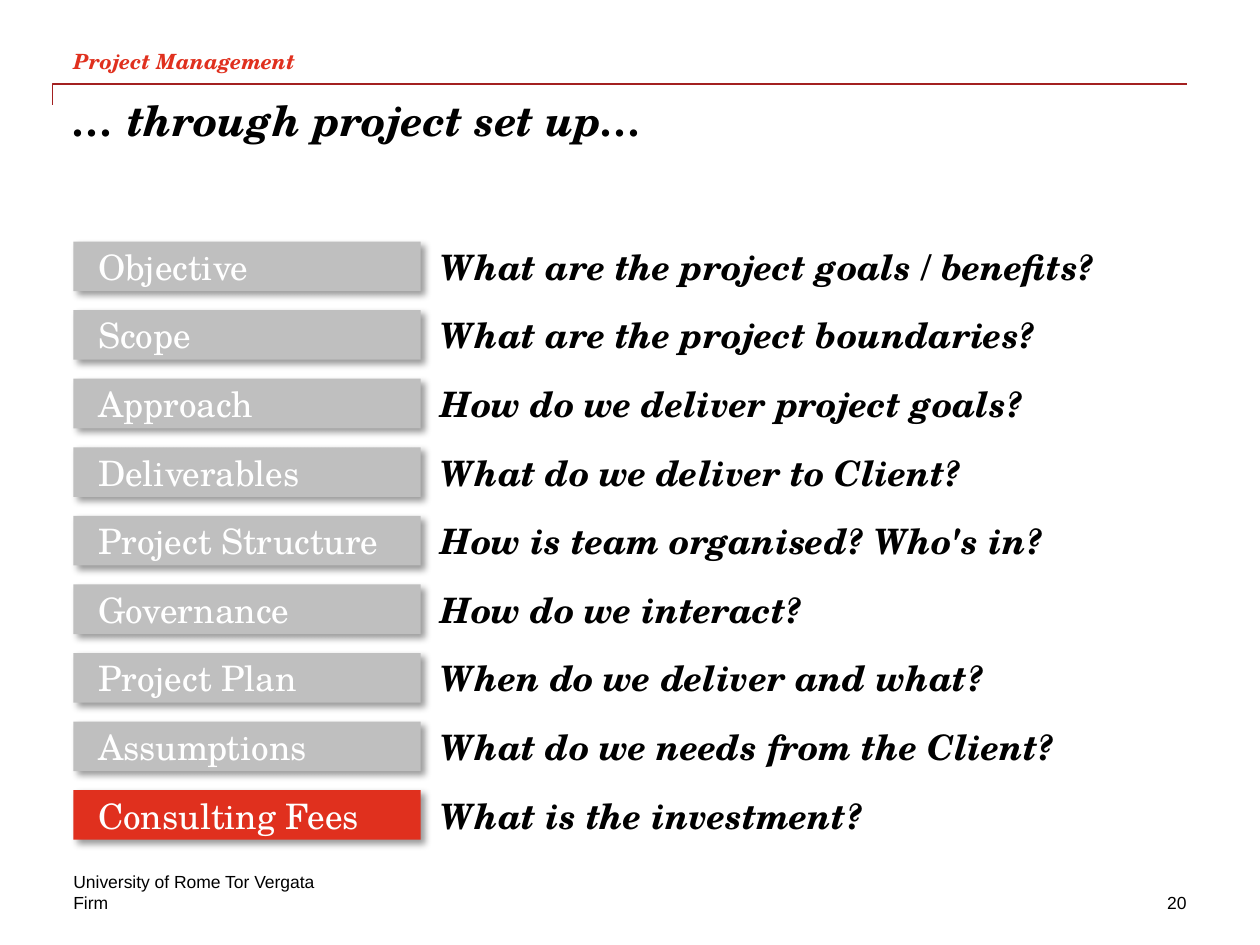
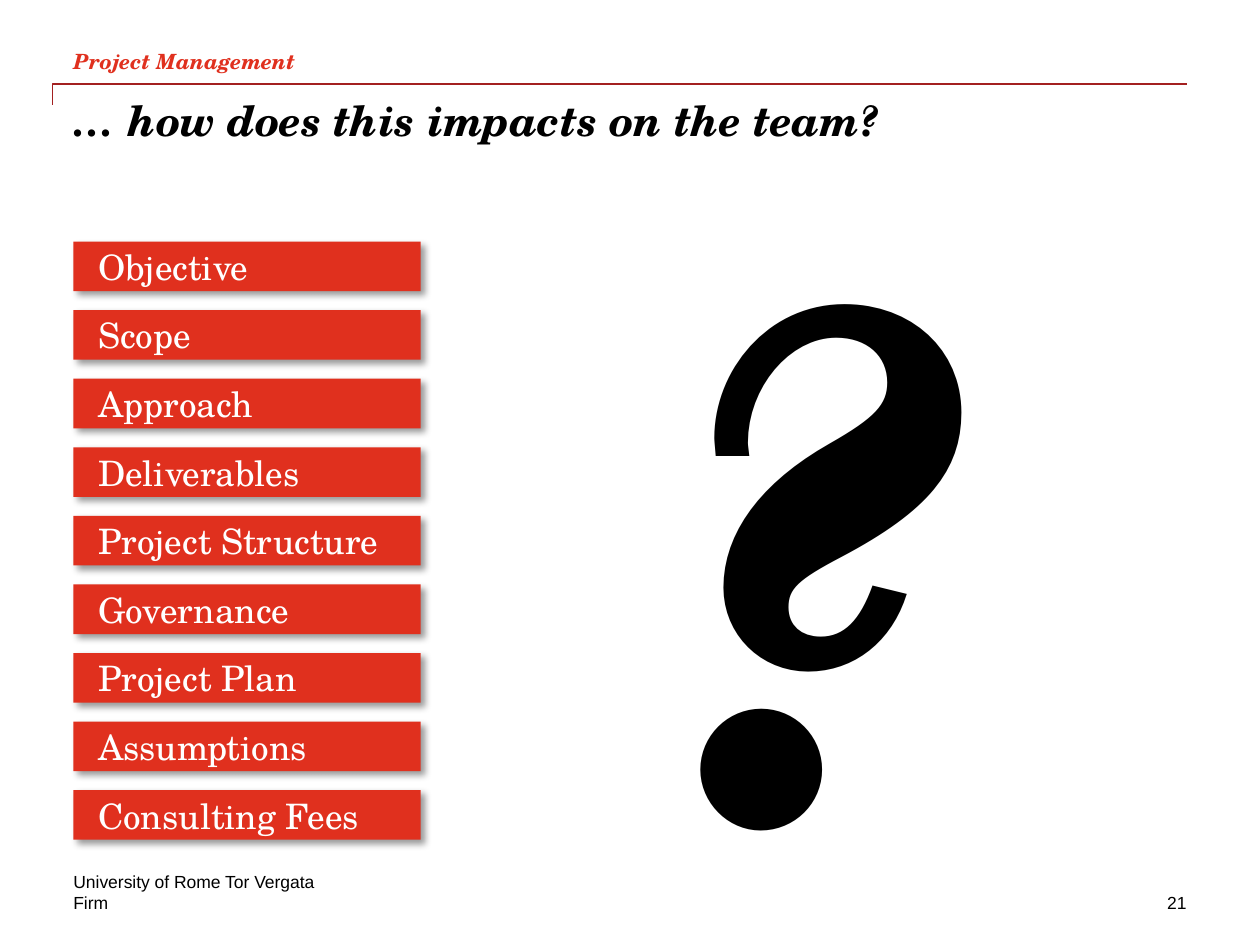
from lxml.etree import SubElement
from pptx import Presentation
from pptx.dml.color import RGBColor
from pptx.enum.shapes import MSO_CONNECTOR, MSO_SHAPE
from pptx.enum.text import MSO_ANCHOR, MSO_AUTO_SIZE, PP_ALIGN
from pptx.oxml import parse_xml
from pptx.oxml.ns import nsdecls, qn
from pptx.util import Cm, Pt

SERIF, SANS = "TeX Gyre Schola", "Arial"
RED, RULE, GREY, BLACK, WHITE = "E0301E", "A32020", "BFBFBF", "000000", "FFFFFF"
LEFT, WIDTH = 1.48, 22.43
ROW_TOP, ROW_STEP, ROW_H = 4.87, 1.3825, 1
BAR_W, ANSWER_X, ANSWER_W = 7, 8.89, 15.03

SHADOW = f"""<a:effectLst {nsdecls("a")}>
  <a:outerShdw blurRad="{Pt(4)}" dist="{Pt(3)}" dir="2700000" algn="tl" rotWithShape="0">
    <a:srgbClr val="{BLACK}"><a:alpha val="40000"/></a:srgbClr>
  </a:outerShdw>
</a:effectLst>"""

TOPICS = [
    ("Objective", "What are the project goals / benefits?"),
    ("Scope", "What are the project boundaries?"),
    ("Approach", "How do we deliver project goals?"),
    ("Deliverables", "What do we deliver to Client?"),
    ("Project Structure", "How is team organised? Who's in?"),
    ("Governance", "How do we interact?"),
    ("Project Plan", "When do we deliver and what?"),
    ("Assumptions", "What do we needs from the Client?"),
    ("Consulting Fees", "What is the investment?"),
]
SLIDES = [
    ("… through project set up…", "20", [GREY] * 8 + [RED]),
    ("… how does this impacts on the team?", "21", [RED] * 9),
]


def rgb(value):
    return RGBColor.from_string(value)


def write(sp, box, text, size, color=BLACK, font=SERIF, strong=True,
          anchor=MSO_ANCHOR.MIDDLE, align=PP_ALIGN.LEFT, inset=(0, 0)):
    sp.left, sp.top, sp.width, sp.height = [Cm(v) for v in box]
    tf = sp.text_frame
    tf.word_wrap = True
    tf.auto_size = MSO_AUTO_SIZE.NONE
    tf.vertical_anchor = anchor
    tf.margin_left, tf.margin_right = Cm(inset[0]), Cm(inset[1])
    tf.margin_top = tf.margin_bottom = 0
    p = tf.paragraphs[0]
    p.text = text
    p.alignment = align
    p.font.name, p.font.size = font, Pt(size)
    p.font.bold = p.font.italic = strong
    p.font.color.rgb = rgb(color)


prs = Presentation()
prs.slide_width, prs.slide_height = Cm(25.4), Cm(19.05)

for title, number, bar_colors in SLIDES:
    s = prs.slides.add_slide(prs.slide_layouts[5])

    rule = s.shapes.add_connector(MSO_CONNECTOR.ELBOW, Cm(12.7), Cm(13.33), Cm(12.28), Cm(-9.53))
    rule.line.color.rgb = rgb(RULE)
    rule.line.width = Pt(1)
    sp_pr = rule._element.spPr
    sp_pr.find(qn("a:xfrm")).set("rot", "5400000")
    sp_pr.find(qn("a:prstGeom")).set("prst", "bentConnector2")
    SubElement(sp_pr, qn("a:effectLst"))

    write(s.shapes.title, (LEFT, 1.9, WIDTH, 2.54), title, 24, anchor=MSO_ANCHOR.TOP)

    for box, text, size, style in [
        ((LEFT, 0.85, WIDTH, 0.63), "Project Management", 12,
         dict(color=RED, anchor=MSO_ANCHOR.BOTTOM)),
        ((LEFT, 17.57, 14.6, 0.42), "University of Rome Tor Vergata", 10,
         dict(font=SANS, strong=False, anchor=MSO_ANCHOR.BOTTOM)),
        ((LEFT, 17.99, 7.2, 0.42), "Firm", 10,
         dict(font=SANS, strong=False, anchor=MSO_ANCHOR.TOP)),
        ((19.69, 17.99, 4.23, 0.42), number, 10,
         dict(font=SANS, strong=False, anchor=MSO_ANCHOR.TOP, align=PP_ALIGN.RIGHT)),
    ]:
        write(s.shapes.add_textbox(0, 0, 0, 0), box, text, size, **style)

    for i, ((topic, question), color) in enumerate(zip(TOPICS, bar_colors)):
        y = ROW_TOP + i * ROW_STEP
        bar = s.shapes.add_shape(MSO_SHAPE.RECTANGLE, 0, 0, 0, 0)
        bar.fill.solid()
        bar.fill.fore_color.rgb = rgb(color)
        bar.line.fill.background()
        bar._element.spPr.append(parse_xml(SHADOW))
        write(bar, (LEFT, y, BAR_W, ROW_H), topic, 20, WHITE, strong=False, inset=(0.5, 0.2))
        if number == "20":
            write(s.shapes.add_textbox(0, 0, 0, 0), (ANSWER_X, y, ANSWER_W, ROW_H), question, 20)

    if number == "21":
        write(s.shapes.add_textbox(0, 0, 0, 0),
              (ANSWER_X, ROW_TOP, ANSWER_W, 8 * ROW_STEP + ROW_H), "?", 400,
              align=PP_ALIGN.CENTER)

prs.save("out.pptx")
